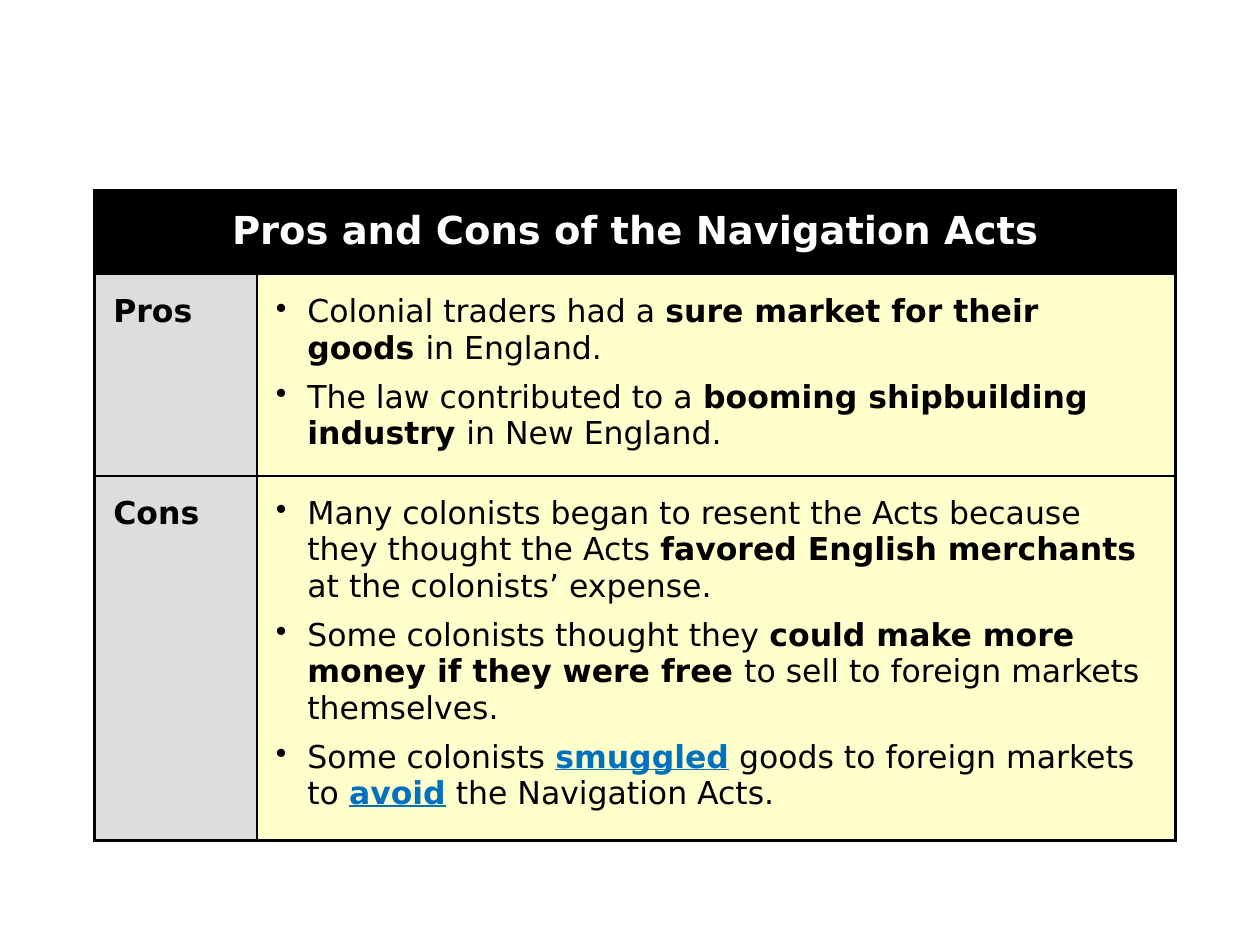
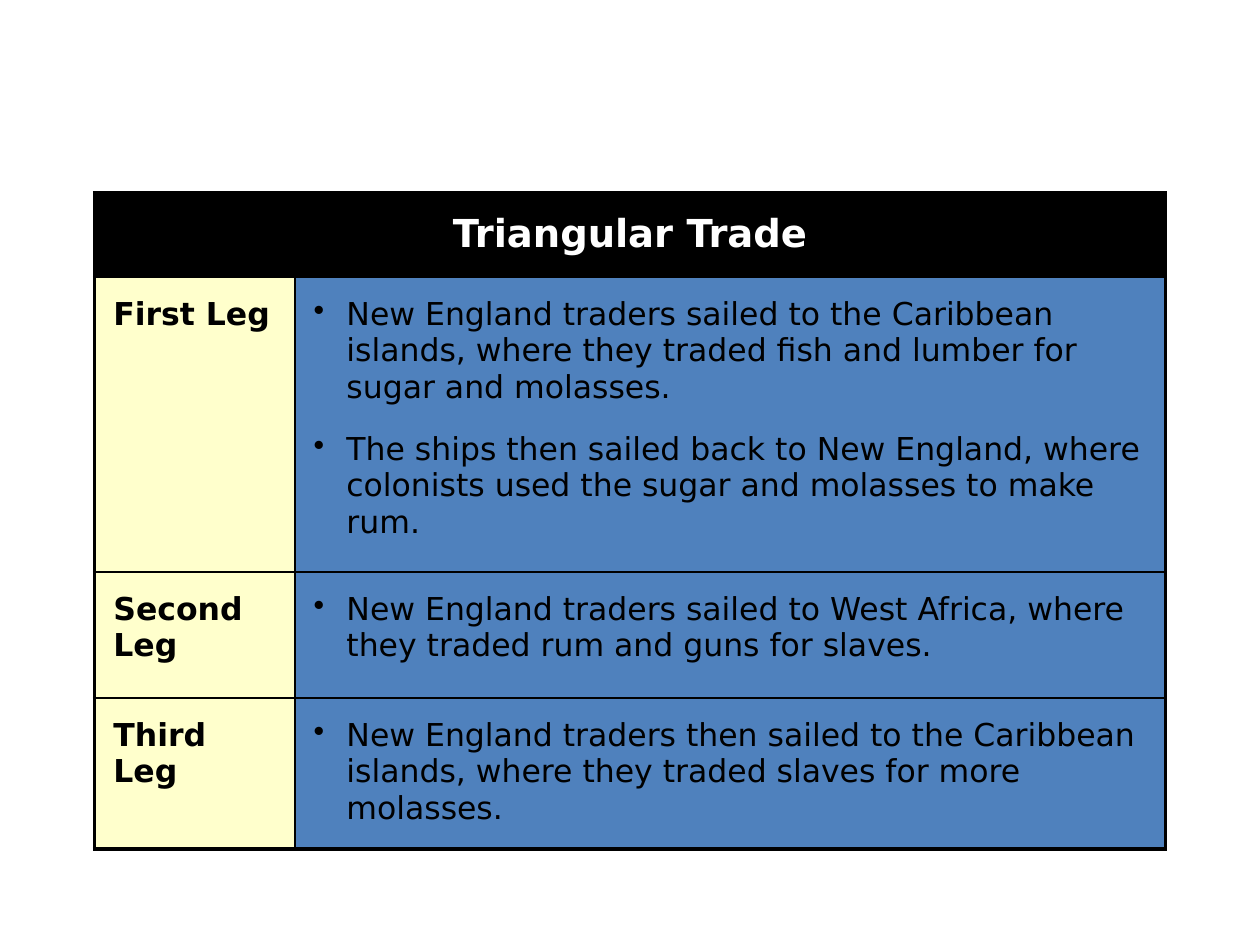
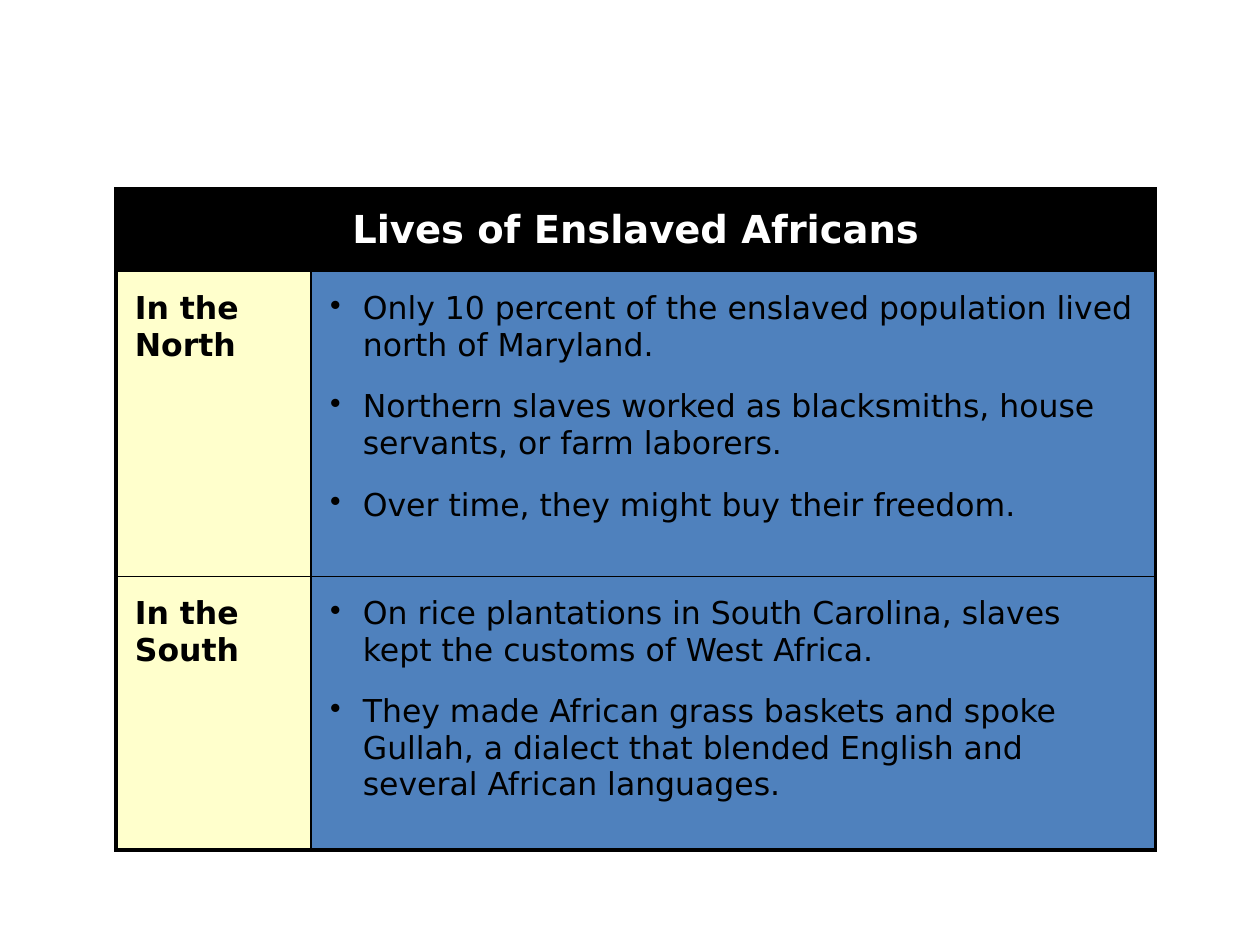
"""Build three summary tables on colonial trade and slavery."""
import pptx
import pptx.dml.color
import pptx.enum.text
import pptx.oxml.ns
import pptx.util
from lxml import etree

Inches = pptx.util.Inches
Pt = pptx.util.Pt

THEME = {
    "font": "DejaVu Sans",
    "black": "000000",
    "white": "FFFFFF",
    "gray": "DDDDDD",
    "cream": "FFFFCC",
    "blue": "4F81BD",
    "key": "0070C0",
    "heading_size": 22,
    "body_size": 18,
    "outer_line": 2.25,
    "inner_line": 1,
    "inset": 0.15,
}

RUN_STYLES = {
    "heading": {"size": THEME["heading_size"], "color": THEME["white"], "bold": True},
    "plain": {"size": THEME["body_size"], "color": THEME["black"], "bold": False},
    "bold": {"size": THEME["body_size"], "color": THEME["black"], "bold": True},
    "key": {"size": THEME["body_size"], "color": THEME["key"], "bold": True, "underline": True},
}

TIGHT_LIST = {"indent": 0.25, "before": 0, "after": 7}
LOOSE_LIST = {"indent": 0.26, "before": 3.6, "after": 10.8}

TABLES = [
    {
        "heading": "Pros and Cons of the Navigation Acts",
        "position": (0.75, 1.51),
        "columns": (1.29, 7.29),
        "heights": (0.67, 1.6, 2.89),
        "fills": ("gray", "cream"),
        "list": TIGHT_LIST,
        "rows": [
            ("Pros", [
                [("Colonial traders had a ", "plain"),
                 ("sure market for their goods ", "bold"),
                 ("in England.", "plain")],
                [("The law contributed to a ", "plain"),
                 ("booming shipbuilding industry ", "bold"),
                 ("in New England.", "plain")],
            ]),
            ("Cons", [
                [("Many colonists began to resent the Acts because they thought the Acts ", "plain"),
                 ("favored English merchants ", "bold"),
                 ("at the colonists’ expense.", "plain")],
                [("Some colonists thought they ", "plain"),
                 ("could make more money if they were free ", "bold"),
                 ("to sell to foreign markets themselves.", "plain")],
                [("Some colonists ", "plain"), ("smuggled", "key"),
                 (" goods to foreign markets to ", "plain"), ("avoid", "key"),
                 (" the Navigation Acts.", "plain")],
            ]),
        ],
    },
    {
        "heading": "Triangular Trade",
        "position": (0.75, 1.53),
        "columns": (1.59, 6.91),
        "heights": (0.67, 2.34, 1, 1.2),
        "fills": ("cream", "blue"),
        "list": LOOSE_LIST,
        "rows": [
            ("First Leg", [
                "New England traders sailed to the Caribbean islands, where they traded "
                "fish and lumber for sugar and molasses.",
                "The ships then sailed back to New England, where colonists used the "
                "sugar and molasses to make rum.",
            ]),
            ("Second Leg", [
                "New England traders sailed to West Africa, where they traded rum and guns for slaves.",
            ]),
            ("Third Leg", [
                "New England traders then sailed to the Caribbean islands, where they "
                "traded slaves for more molasses.",
            ]),
        ],
    },
    {
        "heading": "Lives of Enslaved Africans",
        "position": (0.92, 1.5),
        "columns": (1.55, 6.7),
        "heights": (0.64, 2.42, 2.17),
        "fills": ("cream", "blue"),
        "list": LOOSE_LIST,
        "rows": [
            ("In the North", [
                "Only 10 percent of the enslaved population lived north of Maryland.",
                "Northern slaves worked as blacksmiths, house servants, or farm laborers.",
                "Over time, they might buy their freedom.",
            ]),
            ("In the South", [
                "On rice plantations in South Carolina, slaves kept the customs of West Africa.",
                "They made African grass baskets and spoke Gullah, a dialect that blended "
                "English and several African languages.",
            ]),
        ],
    },
]


def add_run(paragraph, text, style):
    run = paragraph.add_run()
    run.text = text
    values = dict(RUN_STYLES[style], name=THEME["font"])
    run.font.color.rgb = pptx.dml.color.RGBColor.from_string(values.pop("color"))
    values["size"] = Pt(values["size"])
    for name, value in values.items():
        setattr(run.font, name, value)


def add_bullets(cell, items, layout):
    for index, item in enumerate(items):
        frame = cell.text_frame
        paragraph = frame.add_paragraph() if index else frame.paragraphs[0]
        if index:
            paragraph.space_before = Pt(layout["before"])
        if index < len(items) - 1:
            paragraph.space_after = Pt(layout["after"])
        properties = paragraph._p.get_or_add_pPr()
        properties.set("marL", str(Inches(layout["indent"])))
        properties.set("indent", str(-Inches(layout["indent"])))
        etree.SubElement(properties, pptx.oxml.ns.qn("a:buChar"), char="•")
        for text, style in [(item, "plain")] if isinstance(item, str) else item:
            add_run(paragraph, text, style)


def format_cell(cell, fill, outer_sides):
    properties = cell._tc.get_or_add_tcPr()
    for side in "LRTB":
        width = THEME["outer_line" if side in outer_sides else "inner_line"]
        line = etree.SubElement(properties, pptx.oxml.ns.qn("a:ln" + side), w=str(Pt(width)))
        solid = etree.SubElement(line, pptx.oxml.ns.qn("a:solidFill"))
        etree.SubElement(solid, pptx.oxml.ns.qn("a:srgbClr"), val=THEME["black"])
    cell.fill.solid()
    cell.fill.fore_color.rgb = pptx.dml.color.RGBColor.from_string(THEME[fill])
    for side in ("left", "right", "top", "bottom"):
        setattr(cell, "margin_" + side, Inches(THEME["inset"]))


def outer_sides(row, column, row_count):
    edges = {"L": column == 0, "R": column == 1 or row == 0,
             "T": row == 0, "B": row == row_count - 1}
    return [side for side, is_outer in edges.items() if is_outer]


def add_summary_table(slide, content):
    columns, heights = content["columns"], content["heights"]
    left, top = content["position"]
    table = slide.shapes.add_table(
        len(heights), len(columns), Inches(left), Inches(top),
        Inches(sum(columns)), Inches(sum(heights))).table
    table.first_row = table.horz_banding = False
    for column, width in zip(table.columns, columns):
        column.width = Inches(width)
    for row_index, height in enumerate(heights):
        table.rows[row_index].height = Inches(height)
        for column_index, fill in enumerate(content["fills"]):
            format_cell(table.cell(row_index, column_index), fill if row_index else "black",
                        outer_sides(row_index, column_index, len(heights)))
    heading = table.cell(0, 0)
    heading.merge(table.cell(0, 1))
    paragraph = heading.text_frame.paragraphs[0]
    paragraph.alignment = pptx.enum.text.PP_ALIGN.CENTER
    add_run(paragraph, content["heading"], "heading")
    for row_index, (label, items) in enumerate(content["rows"], 1):
        add_run(table.cell(row_index, 0).text_frame.paragraphs[0], label, "bold")
        add_bullets(table.cell(row_index, 1), items, content["list"])


def main():
    presentation = pptx.Presentation()
    presentation.slide_width = Inches(10)
    presentation.slide_height = Inches(7.5)
    for content in TABLES:
        slide = presentation.slides.add_slide(presentation.slide_layouts[6])
        add_summary_table(slide, content)
    presentation.save("out.pptx")


if __name__ == "__main__":
    main()
